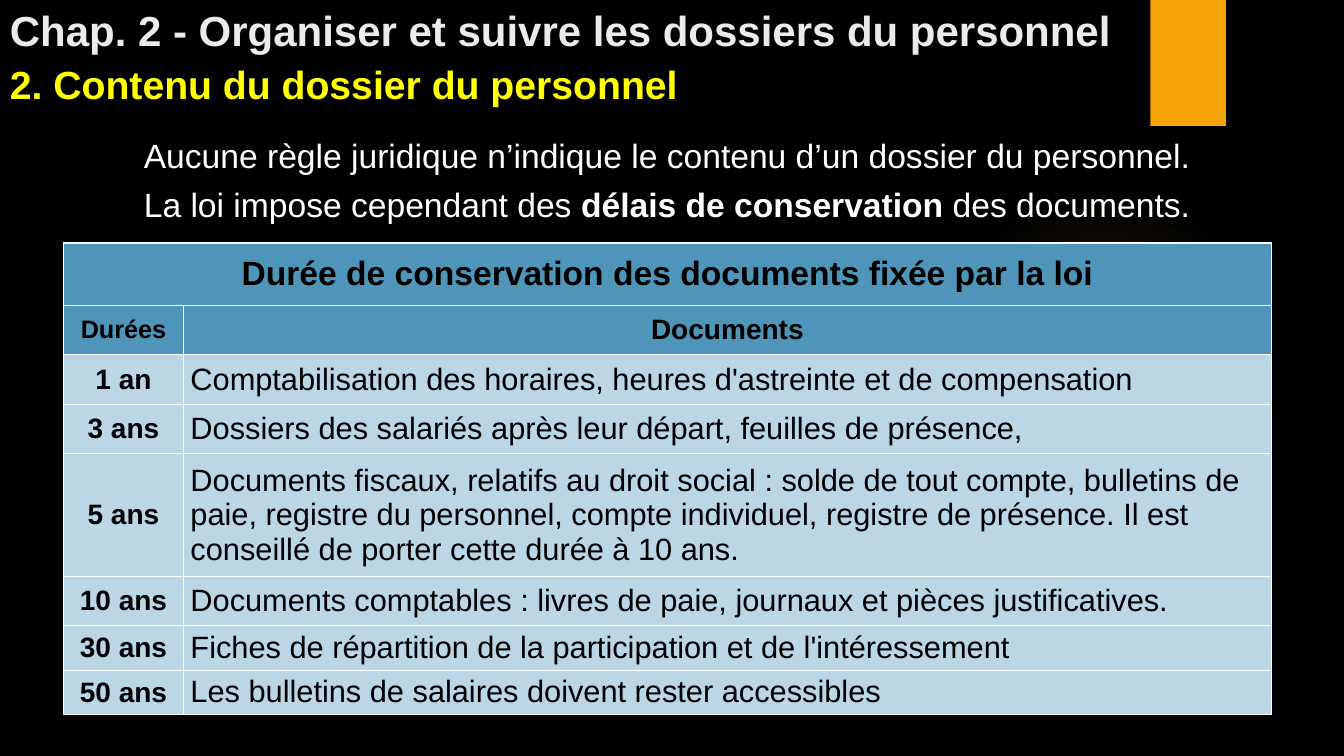
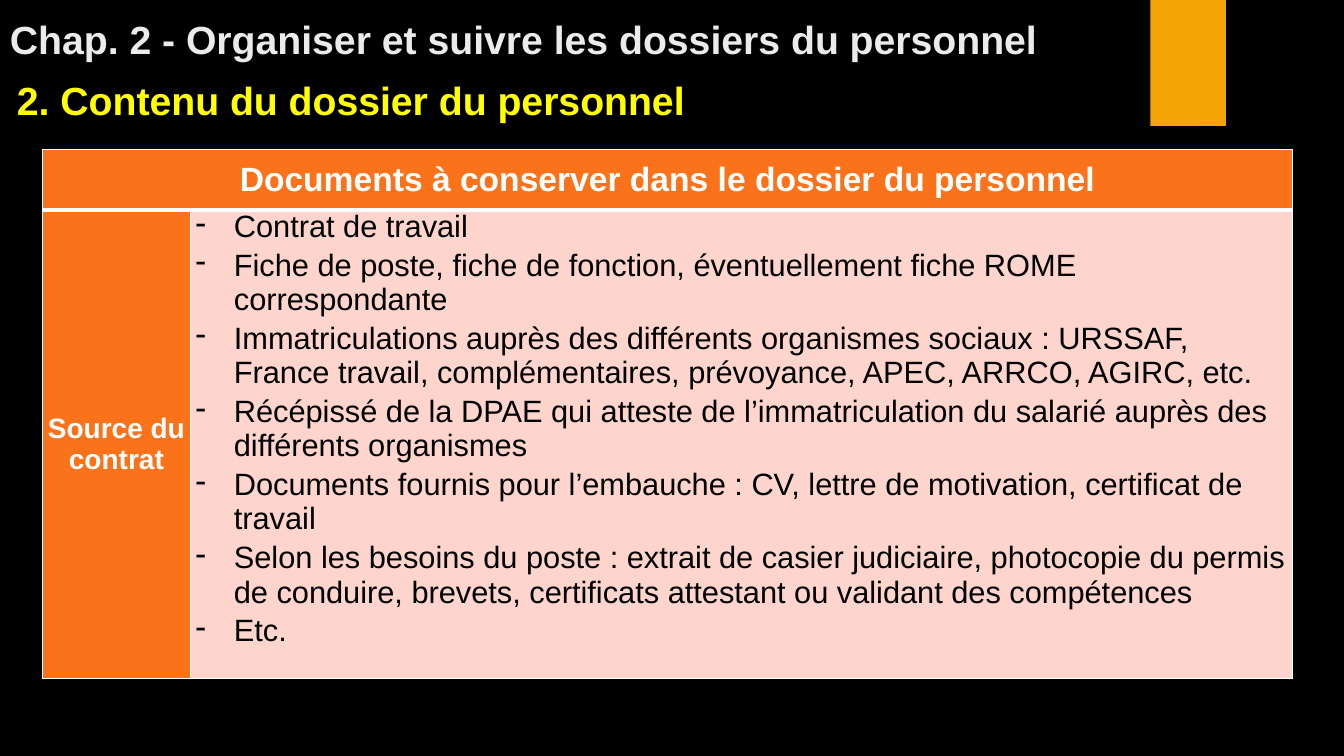
from lxml.etree import SubElement
from pptx import Presentation
from pptx.dml.color import RGBColor
from pptx.enum.shapes import MSO_SHAPE as Shape
from pptx.enum.text import MSO_ANCHOR as Anchor, PP_ALIGN as Align
from pptx.oxml import parse_xml
from pptx.oxml.ns import nsdecls, qn
from pptx.util import Pt

PX = 9144
FONT = "Arial"
BLACK = RGBColor(0x00, 0x00, 0x00)
WHITE = RGBColor(0xFF, 0xFF, 0xFF)
SILVER = RGBColor(0xEB, 0xEB, 0xEB)
YELLOW = RGBColor(0xFF, 0xFF, 0x00)
AMBER = RGBColor(0xF5, 0xA4, 0x08)
GLOW = RGBColor(0xFA, 0xC9, 0x6A)
BLUE = RGBColor(0x4F, 0x95, 0xB9)
PALE_BLUE = RGBColor(0xBB, 0xD6, 0xE4)
ORANGE = RGBColor(0xFA, 0x73, 0x1A)
PALE_ORANGE = RGBColor(0xFD, 0xD5, 0xCD)

CHAPTER = "Chap. 2 - Organiser et suivre les dossiers du personnel"
SECTION = "2. Contenu du dossier du personnel"
INTRO = [
    "Aucune règle juridique n’indique le contenu d’un dossier du personnel.",
    [("La loi impose cependant des ", False), ("délais de conservation", True),
     (" des documents.", False)],
]
RETENTION = [
    ("1 an", "Comptabilisation des horaires, heures d'astreinte et de compensation"),
    ("3 ans", "Dossiers des salariés après leur départ, feuilles de présence,"),
    ("5 ans", "Documents fiscaux, relatifs au droit social : solde de tout compte, "
              "bulletins de paie, registre du personnel, compte individuel, registre de "
              "présence. Il est conseillé de porter cette durée à 10 ans."),
    ("10 ans", "Documents comptables : livres de paie, journaux et pièces justificatives."),
    ("30 ans", "Fiches de répartition de la participation et de l'intéressement"),
    ("50 ans", "Les bulletins de salaires doivent rester accessibles"),
]
CONTRACT_FILES = [
    "Contrat de travail",
    "Fiche de poste, fiche de fonction, éventuellement fiche ROME correspondante",
    "Immatriculations auprès des différents organismes sociaux : URSSAF, France travail, "
    "complémentaires, prévoyance, APEC, ARRCO, AGIRC, etc.",
    "Récépissé de la DPAE qui atteste de l’immatriculation du salarié auprès des "
    "différents organismes",
    "Documents fournis pour l’embauche : CV, lettre de motivation, certificat de travail",
    "Selon les besoins du poste : extrait de casier judiciaire, photocopie du permis de "
    "conduire, brevets, certificats attestant ou validant des compétences",
    "Etc.",
]


def write_text(frame, paragraphs, size=22, color=BLACK, bold=False, align=Align.LEFT,
               before=0, bullet=None, hang=38):
    """Fill a text frame with paragraphs, each a string or a list of (text, bold) spans."""
    frame.word_wrap = True
    for index, content in enumerate(paragraphs):
        para = frame.add_paragraph() if index else frame.paragraphs[0]
        if bullet:
            props = para._p.get_or_add_pPr()
            props.set("marL", str(hang * PX))
            props.set("indent", str(-hang * PX))
            SubElement(props, qn("a:buChar"), char=bullet)
        para.alignment = align
        para.space_before = Pt(before if index else 0)
        spans = [(content, bold)] if isinstance(content, str) else content
        for words, strong in spans:
            span = para.add_run()
            span.text = words
            span.font.name = FONT
            span.font.size = Pt(size)
            span.font.bold = strong
            span.font.color.rgb = color


class Course:
    """Hold the deck style and the slide being built."""

    def __init__(self):
        """Start a black widescreen deck."""
        self.deck = Presentation()
        self.deck.slide_width = 1333 * PX
        self.deck.slide_height = 750 * PX
        fill = self.deck.slide_master.background.fill
        fill.solid()
        fill.fore_color.rgb = BLACK
        self.page = None

    def new_page(self):
        """Add a blank slide with the glow and the amber band."""
        self.page = self.deck.slides.add_slide(self.deck.slide_layouts[6])
        self.glow(941, 183, 308)
        self.shape(Shape.RECTANGLE, 1141, 0, 75, 125, AMBER)

    def shape(self, kind, left, top, width, height, color):
        """Draw a plain filled shape without an outline."""
        shape = self.page.shapes.add_shape(kind, left * PX, top * PX, width * PX, height * PX)
        shape.shadow.inherit = False
        shape.fill.solid()
        shape.fill.fore_color.rgb = color
        shape.line.fill.background()
        return shape

    def glow(self, left, top, side):
        """Draw a faint disc that fades out towards its rim."""
        disc = self.shape(Shape.OVAL, left, top, side, side, GLOW)
        stops = "".join(
            f'<a:gs pos="{place}000"><a:srgbClr val="{GLOW}"><a:alpha val="{alpha}000"/>'
            f'</a:srgbClr></a:gs>' for place, alpha in ((0, 7), (36, 6), (69, 0)))
        gradient = parse_xml(
            f'<a:gradFill {nsdecls("a")}><a:gsLst>{stops}</a:gsLst><a:path path="circle">'
            '<a:fillToRect l="50000" t="50000" r="50000" b="50000"/></a:path></a:gradFill>')
        props = disc._element.spPr
        props.replace(props.find(qn("a:solidFill")), gradient)

    def text(self, left, top, width, height, paragraphs, anchor=Anchor.TOP, **style):
        """Place a text box."""
        box = self.page.shapes.add_textbox(left * PX, top * PX, width * PX, height * PX)
        box.text_frame.vertical_anchor = anchor
        write_text(box.text_frame, paragraphs, **style)

    def headings(self, title_height, title_size, section_left, section_top):
        """Place the chapter title and the section title."""
        self.text(0, 0, 1279, title_height, [CHAPTER], anchor=Anchor.BOTTOM,
                  size=title_size, color=SILVER, bold=True)
        self.text(section_left, section_top, 1206, 57, [SECTION],
                  size=28, color=YELLOW, bold=True)

    def table(self, left, top, widths, heights, header_rule=1):
        """Place a white-ruled table whose first row is merged."""
        frame = self.page.shapes.add_table(len(heights), len(widths), left * PX, top * PX,
                                           sum(widths) * PX, sum(heights) * PX)
        table = frame.table
        table.first_row = table.horz_banding = False
        for column, width in zip(table.columns, widths):
            column.width = width * PX
        for index, (row, height) in enumerate(zip(table.rows, heights)):
            row.height = height * PX
            above = header_rule if index == 1 else 1
            below = header_rule if index == 0 else 1
            for cell in row.cells:
                self.borders(cell, lnL=1, lnR=1, lnT=above, lnB=below)
        table.cell(0, 0).merge(table.cell(0, len(widths) - 1))
        return table

    def borders(self, cell, **rules):
        """Draw white cell borders, given as side and width in points."""
        props = cell._tc.get_or_add_tcPr()
        for side, width in rules.items():
            line = SubElement(props, qn(f"a:{side}"), w=str(Pt(width)))
            paint = SubElement(line, qn("a:solidFill"))
            SubElement(paint, qn("a:srgbClr"), val=str(WHITE))

    def cell(self, cell, paragraphs, fill, inset, anchor=Anchor.MIDDLE, **style):
        """Fill one table cell."""
        cell.margin_left = cell.margin_right = inset * PX
        cell.margin_top = cell.margin_bottom = 0
        cell.vertical_anchor = anchor
        cell.fill.solid()
        cell.fill.fore_color.rgb = fill
        write_text(cell.text_frame, paragraphs, **style)


def retention_page(course):
    """Build the slide on how long documents are kept."""
    course.new_page()
    course.headings(59, 30, 0, 55)
    course.text(31, 129, 1261, 99, INTRO, size=24, color=WHITE, align=Align.CENTER, before=6)
    table = course.table(63, 241, [119, 1079], [62, 49, 49, 49, 122, 49, 44, 44])
    label = dict(inset=7, bold=True, align=Align.CENTER)
    course.cell(table.cell(0, 0), ["Durée de conservation des documents fixée par la loi"],
                BLUE, size=24, **label)
    course.cell(table.cell(1, 0), ["Durées"], BLUE, size=18, **label)
    course.cell(table.cell(1, 1), ["Documents"], BLUE, size=20, **label)
    for row, (period, documents) in enumerate(RETENTION, start=2):
        course.cell(table.cell(row, 0), [period], PALE_BLUE, size=20, **label)
        course.cell(table.cell(row, 1), [documents], PALE_BLUE, inset=7)


def contents_page(course):
    """Build the slide on the documents to keep on file."""
    course.new_page()
    course.headings(67, 28, 7, 71)
    table = course.table(42, 148, [147, 1093], [60, 464], header_rule=3)
    label = dict(inset=5, color=WHITE, bold=True, align=Align.CENTER)
    course.cell(table.cell(0, 0), ["Documents à conserver dans le dossier du personnel"],
                ORANGE, size=24, **label)
    course.cell(table.cell(1, 0), ["Source du", "contrat"], ORANGE, size=20, **label)
    course.cell(table.cell(1, 1), CONTRACT_FILES, PALE_ORANGE, inset=5, anchor=Anchor.TOP,
                before=3, bullet="-")


def main():
    """Build and save the deck."""
    course = Course()
    retention_page(course)
    contents_page(course)
    course.deck.save("out.pptx")


if __name__ == "__main__":
    main()
